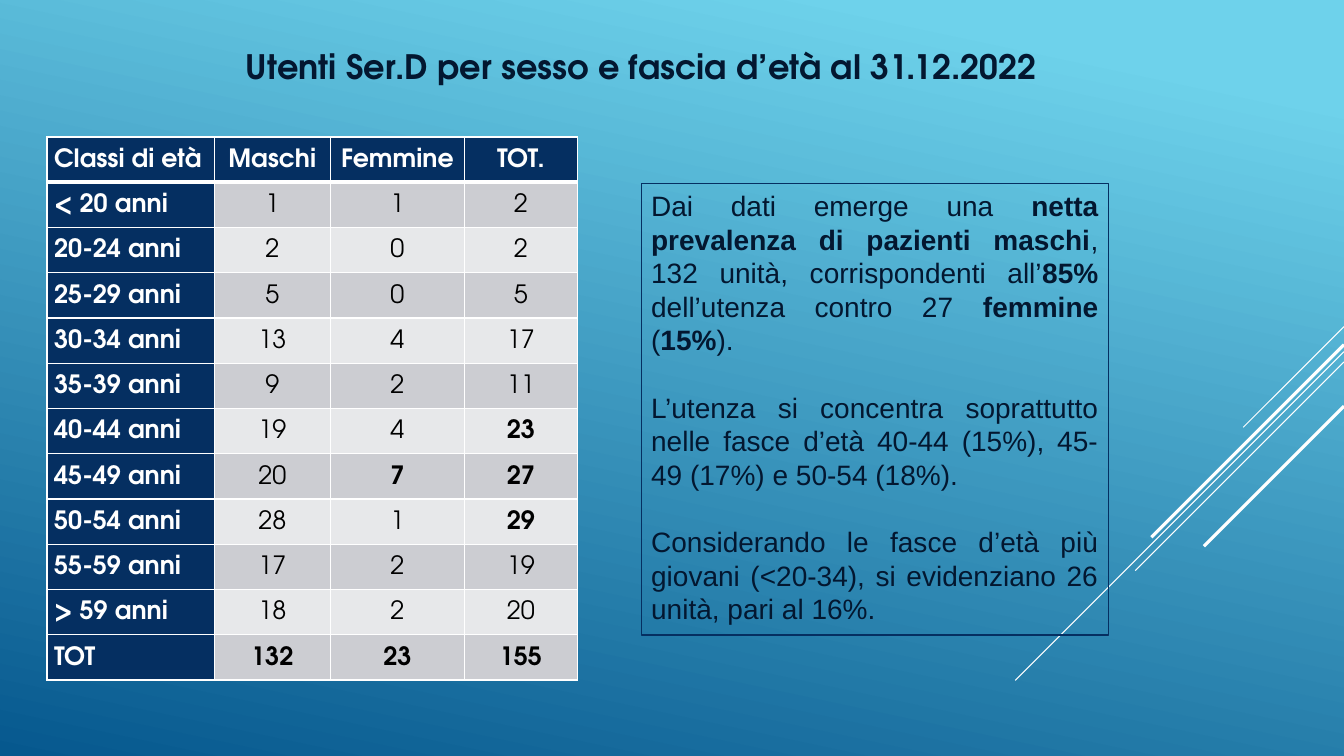
from typing import NamedTuple

from lxml import etree
from pptx import Presentation
from pptx.dml.color import RGBColor
from pptx.enum.shapes import MSO_CONNECTOR, MSO_SHAPE
from pptx.enum.text import MSO_ANCHOR, PP_ALIGN
from pptx.oxml.ns import qn
from pptx.util import Emu, Inches, Pt

LEFT, CENTER, JUSTIFY = PP_ALIGN.LEFT, PP_ALIGN.CENTER, PP_ALIGN.JUSTIFY
TOP = MSO_ANCHOR.TOP
RECTANGLE = MSO_SHAPE.RECTANGLE
STRAIGHT = MSO_CONNECTOR.STRAIGHT

WHITE = RGBColor(0xFF, 0xFF, 0xFF)
BLACK = RGBColor(0x00, 0x00, 0x00)
NAVY = RGBColor(0x05, 0x2F, 0x61)
INK = RGBColor(0x03, 0x17, 0x30)
SKY = RGBColor(0x6E, 0xD2, 0xEB)
OCEAN = RGBColor(0x06, 0x58, 0x8E)
BANDS = (RGBColor(0xCC, 0xCD, 0xD2), RGBColor(0xE7, 0xE8, 0xEA))

HEADING_FONT = "TeX Gyre Adventor"
BODY_FONT = "Arial"
WIDTH, HEIGHT = Inches(13.33), Inches(7.5)


class Box(NamedTuple):
    """Left, top, width and height in percent of the slide."""
    left: float
    top: float
    width: float
    height: float


class Ray(NamedTuple):
    """A 45° line from the right edge; start and reach in percent of the height."""
    start: float
    reach: float
    weight: float


class AgeRow(NamedTuple):
    label: str
    counts: tuple[int, int, int]
    bold_columns: tuple[int, ...] = ()


class Phrase(NamedTuple):
    text: str
    bold: bool = False


TITLE = "Utenti Ser.D per sesso e fascia d’età al 31.12.2022"
TITLE_BOX = Box(17.55, 5.47, 64.97, 6.67)
TABLE_BOX = Box(3.5, 18.13, 39.46, 71.87)
COMMENT_BOX = Box(47.71, 24.27, 34.75, 59.73)

RAYS = (
    Ray(43.2, 13.33, 0.75),
    Ray(46.53, 43.47, 0.75),
    Ray(47.87, 27.6, 0.75),
    Ray(45.6, 25.47, 2.25),
    Ray(53.73, 18.53, 2.25),
)

COLUMN_SHARES = (12.45, 8.63, 9.98, 8.4)
HEADERS = ("Classi di età", "Maschi", "Femmine", "TOT.")
AGE_ROWS = (
    AgeRow("< 20 anni", (1, 1, 2)),
    AgeRow("20-24 anni", (2, 0, 2)),
    AgeRow("25-29 anni", (5, 0, 5)),
    AgeRow("30-34 anni", (13, 4, 17)),
    AgeRow("35-39 anni", (9, 2, 11)),
    AgeRow("40-44 anni", (19, 4, 23), (3,)),
    AgeRow("45-49 anni", (20, 7, 27), (2, 3)),
    AgeRow("50-54 anni", (28, 1, 29), (3,)),
    AgeRow("55-59 anni", (17, 2, 19)),
    AgeRow("> 59 anni", (18, 2, 20)),
    AgeRow("TOT", (132, 23, 155), (1, 2, 3)),
)

COMMENT = (
    (
        Phrase("Dai dati emerge una "),
        Phrase("netta prevalenza di pazienti maschi", True),
        Phrase(", 132 unità, corrispondenti all’"),
        Phrase("85%", True),
        Phrase(" dell’utenza contro 27 "),
        Phrase("femmine", True),
        Phrase(" ("),
        Phrase("15%", True),
        Phrase(")."),
    ),
    (Phrase("L’utenza si concentra soprattutto nelle fasce d’età "
            "40-44 (15%), 45-49 (17%) e 50-54 (18%)."),),
    (Phrase("Considerando le fasce d’età più giovani (<20-34), "
            "si evidenziano 26 unità, pari al 16%."),),
)


def across(share: float) -> Emu:
    return Emu(round(WIDTH * share / 100))


def down(share: float) -> Emu:
    return Emu(round(HEIGHT * share / 100))


def place(box: Box) -> tuple[Emu, Emu, Emu, Emu]:
    return across(box.left), down(box.top), across(box.width), down(box.height)


def style_run(r, font: str, size: float, color: RGBColor, bold: bool) -> None:
    r.font.name, r.font.size, r.font.bold = font, Pt(size), bold
    r.font.color.rgb = color


def paint_background(s) -> None:
    fill = s.background.fill
    fill.gradient()
    fill.gradient_angle = 258
    for stop, position, color in zip(fill.gradient_stops, (0.1, 1), (SKY, OCEAN)):
        stop.position = position
        stop.color.rgb = color


def add_ray(s, ray: Ray) -> None:
    start, reach = down(ray.start), down(ray.reach)
    line = s.shapes.add_connector(STRAIGHT, WIDTH, start, WIDTH - reach, start + reach)
    line.line.color.rgb = WHITE
    line.line.width = Pt(ray.weight)
    etree.SubElement(line._element.spPr, qn("a:effectLst"))


def add_title(s) -> None:
    tf = s.shapes.add_textbox(*place(TITLE_BOX)).text_frame
    tf.word_wrap = True
    tf.text = TITLE
    style_run(tf.paragraphs[0].runs[0], HEADING_FONT, 24, INK, True)


def add_border(cell, side: str, weight: float) -> None:
    ln = etree.SubElement(cell._tc.get_or_add_tcPr(), qn(f"a:ln{side}"), w=str(Pt(weight)))
    fill = etree.SubElement(ln, qn("a:solidFill"))
    etree.SubElement(fill, qn("a:srgbClr"), val=str(WHITE))


def fill_cell(cell, text: str, row: int, column: int, bold: bool) -> None:
    is_label = row == 0 or column == 0
    cell.margin_left = cell.margin_right = Inches(0.07)
    cell.margin_top = cell.margin_bottom = 0
    for side in "LRTB":
        under_header = (row, side) in ((0, "B"), (1, "T"))
        add_border(cell, side, 3 if under_header else 1)
    cell.fill.solid()
    cell.fill.fore_color.rgb = NAVY if is_label else BANDS[(row - 1) % 2]
    p = cell.text_frame.paragraphs[0]
    p.text = text
    p.alignment = CENTER if column else JUSTIFY if row else LEFT
    p.line_spacing = 1.5
    p.space_after = Pt(10)
    style_run(p.runs[0], HEADING_FONT, 18, WHITE if is_label else BLACK, bold or is_label)


def add_age_table(s) -> None:
    rows = (AgeRow(HEADERS[0], HEADERS[1:]), *AGE_ROWS)
    table = s.shapes.add_table(len(rows), len(HEADERS), *place(TABLE_BOX)).table
    for column, share in zip(table.columns, COLUMN_SHARES):
        column.width = across(share)
    for i, row in enumerate(rows):
        table.rows[i].height = down(TABLE_BOX.height / len(rows))
        for j, value in enumerate((row.label, *row.counts)):
            fill_cell(table.cell(i, j), str(value), i, j, j in row.bold_columns)


def add_comment(s) -> None:
    sp = s.shapes.add_shape(RECTANGLE, *place(COMMENT_BOX))
    sp.shadow.inherit = False
    sp.fill.background()
    sp.line.color.rgb = NAVY
    sp.line.width = Pt(0.75)
    tf = sp.text_frame
    tf.word_wrap = True
    tf.vertical_anchor = TOP
    for i, phrases in enumerate(COMMENT):
        p = tf.add_paragraph() if i else tf.paragraphs[0]
        p.alignment = JUSTIFY
        p.space_before = Pt(24 if i else 0)
        for phrase in phrases:
            r = p.add_run()
            r.text = phrase.text
            style_run(r, BODY_FONT, 20, INK, phrase.bold)


def main() -> None:
    prs = Presentation()
    prs.slide_width, prs.slide_height = WIDTH, HEIGHT
    s = prs.slides.add_slide(prs.slide_layouts[6])
    paint_background(s)
    for ray in RAYS:
        add_ray(s, ray)
    add_age_table(s)
    add_comment(s)
    add_title(s)
    prs.save("out.pptx")


if __name__ == "__main__":
    main()
